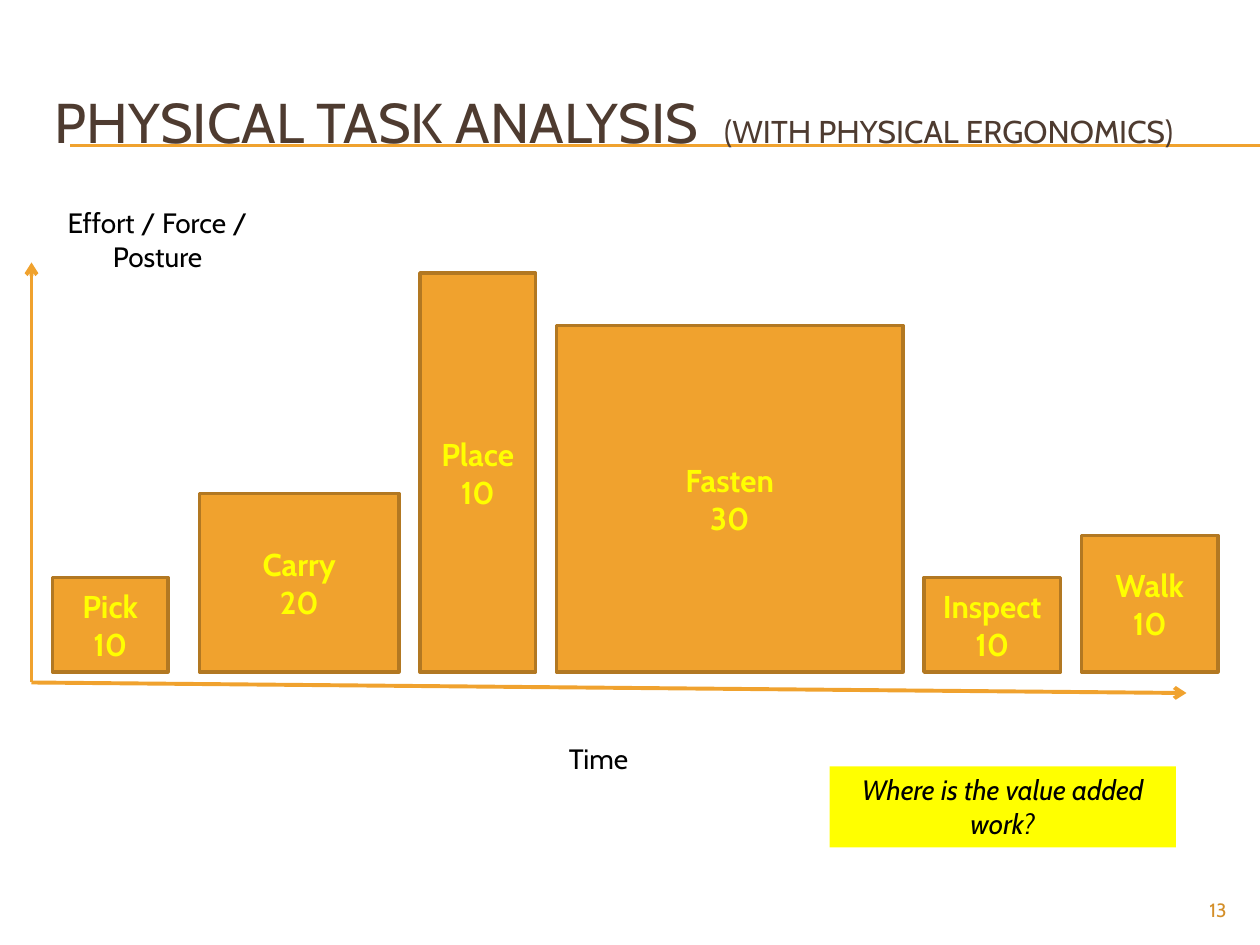
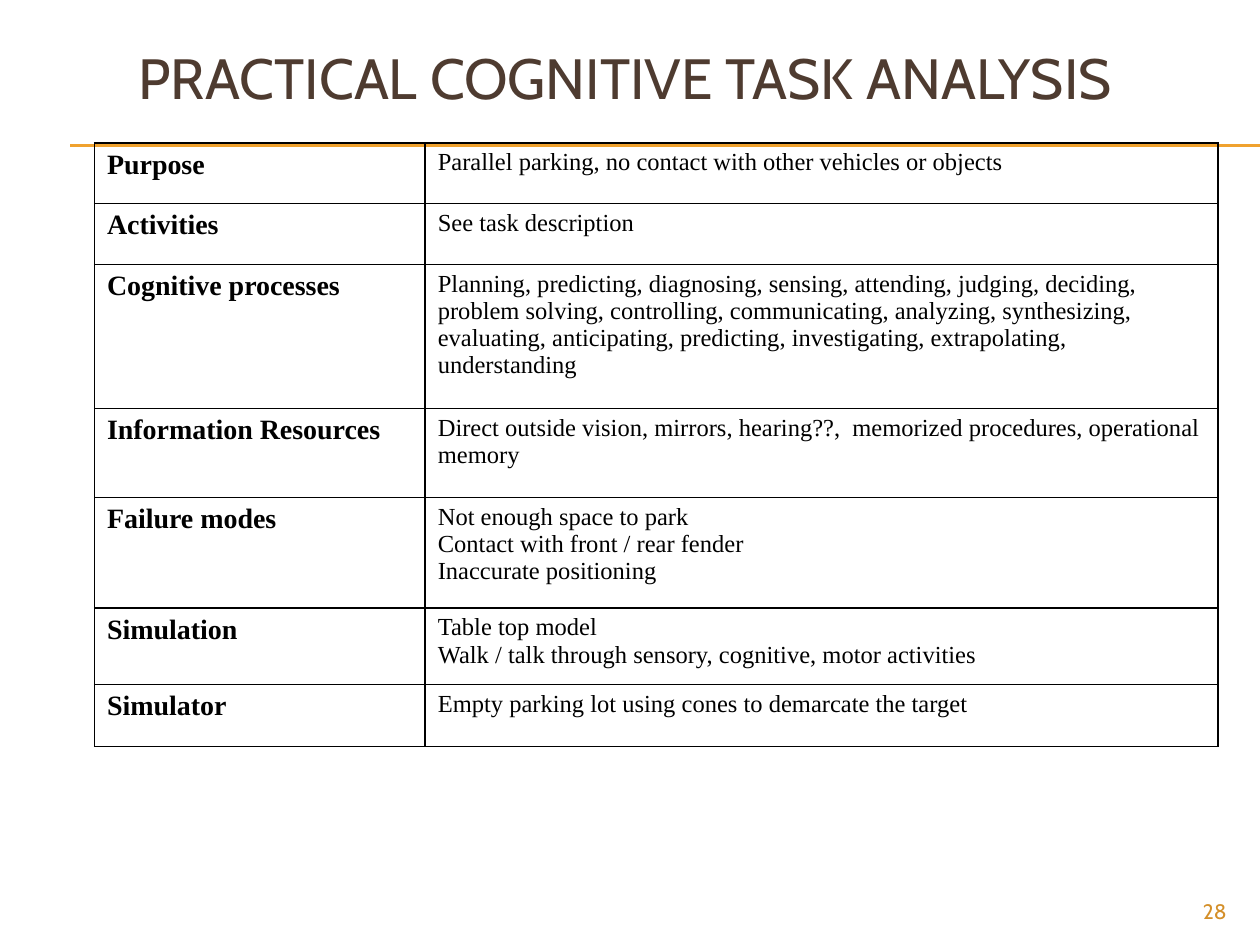
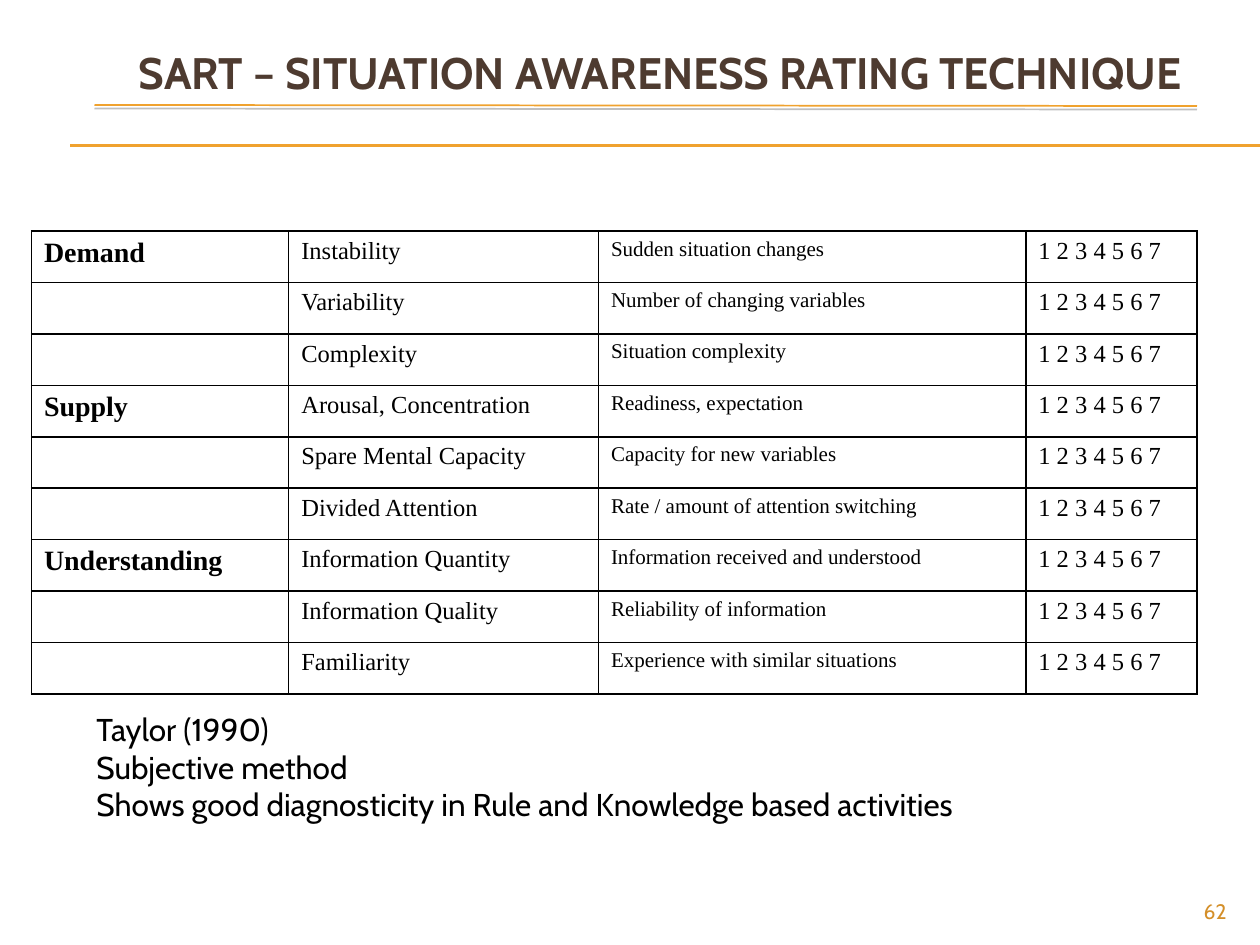
from lxml import etree
from pptx import Presentation
from pptx import util as u
from pptx.dml.color import RGBColor
from pptx.enum import shapes, text
from pptx.oxml.ns import qn

# ---- Content ----
TITLES = [
    dict(box=(40, 60, 1140, 110), page="13", page_size=11,
         runs=[("PHYSICAL TASK ANALYSIS  ", dict(size=32)),
               ("(WITH PHYSICAL ERGONOMICS)", dict(size=18))]),
    dict(box=(120, 36, 1020, 74), page="28", page_size=12,
         runs=[("PRACTICAL COGNITIVE TASK ANALYSIS", dict(size=32.4))]),
    dict(box=(120, 36, 1020, 64), page="62", page_size=12,
         runs=[("SART – SITUATION AWARENESS RATING TECHNIQUE", dict(size=25.2, bold=True))]),
]

# Task, time, left, width, height
TASKS = [
    ("Pick", "10", 50, 110, 90),
    ("Carry", "20", 190, 190, 170),
    ("Place", "10", 400, 110, 380),
    ("Fasten", "30", 530, 330, 330),
    ("Inspect", "10", 880, 130, 90),
    ("Walk", "10", 1030, 130, 130),
]
BASELINE = 640
ORIGIN, AXIS_ENDS = (30, 650), [(30, 250), (1130, 660)]
AXIS_LABELS = [("Effort / Force / Posture", (20, 190, 260, 77)),
               ("Time", (470, 700, 200, 44))]
QUESTION = "Where is the value added work?"

PARKING = [
    ("Purpose", "Parallel parking, no contact with other vehicles or objects"),
    ("Activities", "See task description"),
    ("Cognitive processes",
     "Planning, predicting, diagnosing, sensing, attending, judging, deciding, "
     "problem solving, controlling, communicating, analyzing, synthesizing, "
     "evaluating, anticipating, predicting, investigating, extrapolating, understanding"),
    ("Information Resources",
     "Direct outside vision, mirrors, hearing??,  memorized procedures, operational memory"),
    ("Failure modes",
     "Not enough space to park\nContact with front / rear fender\nInaccurate positioning"),
    ("Simulation",
     "Table top model\nWalk / talk through sensory, cognitive, motor activities"),
    ("Simulator", "Empty parking lot using cones to demarcate the target"),
]
PARKING_ROWS = [58, 58, 137, 85, 105, 73, 59]

SART = {
    "Demand": [("Instability", "Sudden situation changes"),
               ("Variability", "Number of changing variables"),
               ("Complexity", "Situation complexity")],
    "Supply": [("Arousal, Concentration", "Readiness, expectation"),
               ("Spare Mental Capacity", "Capacity for new variables"),
               ("Divided Attention", "Rate / amount of attention switching")],
    "Understanding": [("Information Quantity", "Information received and understood"),
                      ("Information Quality", "Reliability of information"),
                      ("Familiarity", "Experience with similar situations")],
}
RATING = "1 2 3 4 5 6 7"
SART_NOTES = ["Taylor (1990)", "Subjective method",
              "Shows good diagnosticity in Rule and Knowledge based activities"]


# ---- Theme ----
class Theme:
    sans, serif = "Cabin", "Times New Roman"
    accent, accent_dark, number = "F0A22E", "B27822", "D48F29"
    title, ink, highlight, shadow = "4E3B30", "000000", "FFFF00", "808080"
    bar = dict(size=18, bold=True, color=highlight)
    label = dict(size=16)
    question = dict(size=16, italic=True)
    notes = dict(size=18)
    heading = dict(size=16, bold=True, name=serif)
    entry = dict(size=14, name=serif)
    detail = dict(size=12, name=serif)


PX = 7620  # EMU; 120 px to the inch
LEFT, CENTER, RIGHT = (text.PP_ALIGN.LEFT, text.PP_ALIGN.CENTER, text.PP_ALIGN.RIGHT)
TOP, MIDDLE = text.MSO_ANCHOR.TOP, text.MSO_ANCHOR.MIDDLE


def px(values):
    return [v * PX for v in values]


def rgb(value):
    return RGBColor.from_string(value)


# ---- Text ----
def add_run(p, words, fmt):
    r = p.add_run()
    r.text = words
    for key, value in {"name": Theme.sans, "color": Theme.ink, **fmt}.items():
        if key == "color":
            r.font.color.rgb = rgb(value)
        else:
            setattr(r.font, key, u.Pt(value) if key == "size" else value)


def write(tf, lines, fmt, align=LEFT, anchor=TOP):
    tf.word_wrap = True
    tf.vertical_anchor = anchor
    for i, line in enumerate(lines):
        p = tf.add_paragraph() if i else tf.paragraphs[0]
        p.alignment = align
        add_run(p, line, fmt)


def add_text(slide, box, lines, fmt, align=LEFT):
    write(slide.shapes.add_textbox(*px(box)).text_frame, lines, fmt, align)


# ---- Shapes ----
def add_rect(slide, box, lines, fmt, fill, outline=None, anchor=MIDDLE):
    sp = slide.shapes.add_shape(shapes.MSO_SHAPE.RECTANGLE, *px(box))
    sp.shadow.inherit = False
    sp.fill.solid()
    sp.fill.fore_color.rgb = rgb(fill)
    if outline:
        sp.line.color.rgb = rgb(outline)
        sp.line.width = u.Pt(2)
    else:
        sp.line.fill.background()
    write(sp.text_frame, lines, fmt, CENTER, anchor)


def add_line(slide, start, end, width, arrow=False, shadow=False):
    line = slide.shapes.add_connector(shapes.MSO_CONNECTOR.STRAIGHT, *px(start + end))
    line.line.color.rgb = rgb(Theme.accent)
    line.line.width = u.Pt(width)
    sp_pr = line.element.spPr
    if arrow:
        etree.SubElement(sp_pr.find(qn("a:ln")), qn("a:tailEnd"), type="arrow")
    effects = etree.SubElement(sp_pr, qn("a:effectLst"))
    if shadow:
        outer = etree.SubElement(effects, qn("a:outerShdw"), blurRad="0",
                                 dist=str(u.Pt(2)), dir="5400000")
        color = etree.SubElement(outer, qn("a:srgbClr"), val=Theme.shadow)
        etree.SubElement(color, qn("a:alpha"), val="50000")
    return line


# ---- Tables ----
def add_borders(cell):
    tc_pr = cell._tc.get_or_add_tcPr()
    for side in ("lnL", "lnR", "lnT", "lnB"):
        ln = etree.SubElement(tc_pr, qn(f"a:{side}"), w=str(u.Pt(1)))
        fill = etree.SubElement(ln, qn("a:solidFill"))
        etree.SubElement(fill, qn("a:srgbClr"), val=Theme.ink)


def add_table(slide, origin, widths, heights, rows, formats):
    size = (sum(widths), sum(heights))
    table = slide.shapes.add_table(len(rows), len(widths), *px(origin + size)).table
    table.first_row = table.horz_banding = False
    for column, width in zip(table.columns, widths):
        column.width = width * PX
    for i, (row, height) in enumerate(zip(rows, heights)):
        table.rows[i].height = height * PX
        for j, (words, fmt) in enumerate(zip(row, formats)):
            cell = table.cell(i, j)
            add_borders(cell)
            cell.fill.background()
            if words:
                write(cell.text_frame, words.split("\n"), fmt)


# ---- Shared slide parts ----
def add_rules(slide, layout):
    """Draw the double title rule and move it to the layout."""
    for i, y in enumerate((138, 139)):
        line = add_line(slide, (67, y), (1200, y), 0.75)
        line.element.nvCxnSpPr.cNvPr.id = 90 + i
        layout.shapes.element.append(line.element)


def add_slide(prs, layout, spec_title):
    slide = prs.slides.add_slide(layout)
    title = slide.shapes.title
    title.left, title.top, title.width, title.height = px(spec_title["box"])
    tf = title.text_frame
    write(tf, [], {}, anchor=MIDDLE)
    tf.auto_size = text.MSO_AUTO_SIZE.NONE
    tf.paragraphs[0].alignment = LEFT
    for words, fmt in spec_title["runs"]:
        add_run(tf.paragraphs[0], words, dict(color=Theme.title, **fmt))
    add_text(slide, (1080, 850, 100, 32), [spec_title["page"]],
             dict(size=spec_title["page_size"], color=Theme.number), RIGHT)
    return slide


# ---- Slides ----
def fill_physical(slide):
    for name, time, left, width, height in TASKS:
        add_rect(slide, (left, BASELINE - height, width, height), [name, time],
                 Theme.bar, Theme.accent, Theme.accent_dark)
    for end in AXIS_ENDS:
        add_line(slide, ORIGIN, end, 2.25, arrow=True)
    for label, box in AXIS_LABELS:
        add_text(slide, box, [label], Theme.label, CENTER)
    add_rect(slide, (790, 730, 330, 77), [QUESTION], Theme.question,
             Theme.highlight, anchor=TOP)


def fill_cognitive(slide):
    add_table(slide, (90, 136), (315, 755), PARKING_ROWS, PARKING,
              (Theme.heading, Theme.entry))


def fill_sart(slide):
    rows = [("" if i else group, factor, meaning, RATING)
            for group, factors in SART.items()
            for i, (factor, meaning) in enumerate(factors)]
    add_table(slide, (30, 220), (245, 295, 407, 163), [49] * len(rows), rows,
              (Theme.heading, Theme.entry, Theme.detail, Theme.entry))
    add_text(slide, (80, 670, 950, 121), SART_NOTES, Theme.notes)
    add_line(slide, (90, 100), (1140, 101), 1, shadow=True)


def main():
    prs = Presentation()
    prs.slide_width, prs.slide_height = px((1200, 900))
    layout = prs.slide_layouts[5]
    slides = [add_slide(prs, layout, title) for title in TITLES]
    add_rules(slides[0], layout)
    for slide, fill in zip(slides, (fill_physical, fill_cognitive, fill_sart)):
        fill(slide)
    prs.save("out.pptx")


if __name__ == "__main__":
    main()
